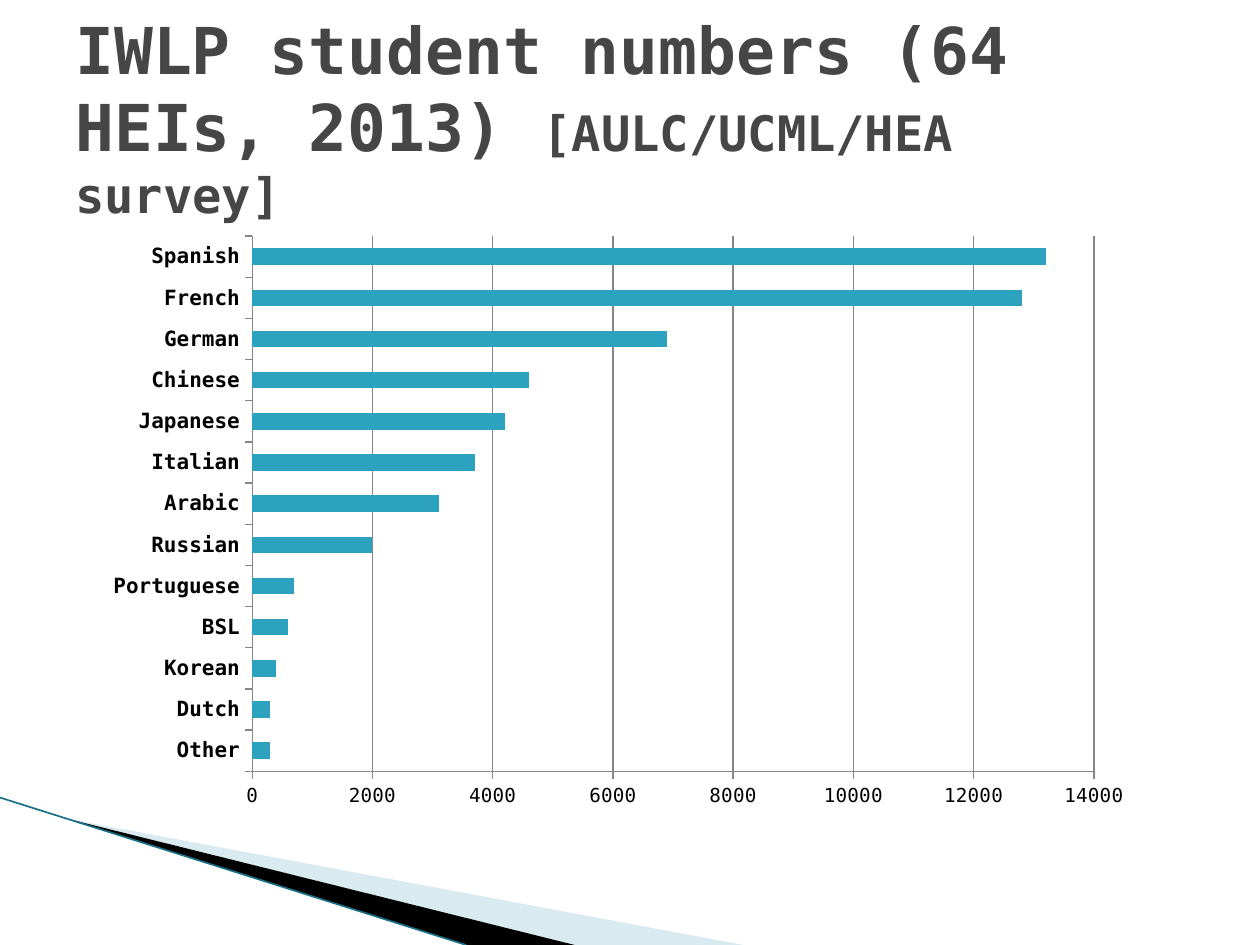
from lxml import etree
from pptx import Presentation
from pptx.chart.data import CategoryChartData
from pptx.dml.color import RGBColor
from pptx.enum.chart import XL_CHART_TYPE as ChartType, XL_TICK_MARK as Tick
from pptx.enum.text import MSO_ANCHOR as Anchor
from pptx.oxml import parse_xml
from pptx.oxml.ns import nsdecls, qn
from pptx.util import Inches, Pt

FONT = "DejaVu Sans Mono"
STUDENTS = {
    "Other": 300, "Dutch": 300, "Korean": 400, "BSL": 600, "Portuguese": 700,
    "Russian": 2000, "Arabic": 3100, "Italian": 3700, "Japanese": 4200,
    "Chinese": 4600, "German": 6900, "French": 12800, "Spanish": 13200,
}


def color(value):
    """Turn a hex string into a colour."""
    return RGBColor.from_string(value)


def set_font(font, size, bold=False, ink="000000"):
    """Give a font the slide's typeface and the stated look."""
    font.name, font.size, font.bold = FONT, Pt(size), bold
    font.color.rgb = color(ink)


def add_wedge(slide, points, fill, alpha=100):
    """Draw a filled outline through points given in inches."""
    corners = [(Inches(x), Inches(y)) for x, y in points]
    builder = slide.shapes.build_freeform(*corners[0])
    builder.add_line_segments(corners[1:])
    wedge = builder.convert_to_shape()
    wedge.shadow.inherit = False
    wedge.line.fill.background()
    wedge.fill.solid()
    wedge.fill.fore_color.rgb = color(fill)
    if alpha < 100:
        tone = wedge.fill._xPr.find(".//" + qn("a:srgbClr"))
        etree.SubElement(tone, qn("a:alpha"), val=str(alpha * 1000))


def add_corner(slide, left, top, width, height):
    """Draw the sweeping wedges and edge line in the bottom corner."""
    bottom = top + height
    tip = (left + 0.54, top + 0.17)
    add_wedge(slide, [tip, (left + width, bottom), (left + 4.56, bottom)],
              "A0CBDC", 40)
    add_wedge(slide, [tip, (left + 4.56, bottom), (left + 3.7, bottom)], "000000")
    edge = slide.shapes.add_connector(
        1, Inches(left), Inches(top), Inches(left + 3.7), Inches(bottom))
    edge.line.color.rgb = color("1A7088")
    edge.line.width = Pt(0.95)
    edge._element.spPr.append(parse_xml(f"<a:effectLst {nsdecls('a')}/>"))


def add_title(slide, left, top, width, height):
    """Write the heading with its smaller source note."""
    title = slide.shapes.add_textbox(
        Inches(left), Inches(top), Inches(width), Inches(height))
    frame = title.text_frame
    frame.word_wrap = True
    frame.vertical_anchor = Anchor.MIDDLE
    heading = frame.paragraphs[0]
    for words, size in (("IWLP student numbers (64 HEIs, 2013) ", 36.9),
                        ("[AULC/UCML/HEA survey]", 27.9)):
        run = heading.add_run()
        run.text = words
        set_font(run.font, size, True, "464646")


def set_plot_area(chart, **fractions):
    """Fix the inner plot area as fractions of the chart."""
    sizes = "".join(f'<c:{key} val="{val}"/>' for key, val in fractions.items())
    layout = parse_xml(
        f"<c:layout {nsdecls('c')}><c:manualLayout>"
        '<c:layoutTarget val="inner"/><c:xMode val="edge"/><c:yMode val="edge"/>'
        f"{sizes}</c:manualLayout></c:layout>")
    plot_area = chart._chartSpace.chart.plotArea
    for old in plot_area.findall(qn("c:layout")):
        plot_area.remove(old)
    plot_area.insert(0, layout)


def add_student_chart(slide, left, top, width, height):
    """Chart the number of students for each language."""
    data = CategoryChartData()
    data.categories = list(STUDENTS)
    data.add_series("Series 1", list(STUDENTS.values()))
    chart = slide.shapes.add_chart(
        ChartType.BAR_CLUSTERED, Inches(left), Inches(top),
        Inches(width), Inches(height), data).chart
    chart.has_legend = chart.has_title = False
    set_font(chart.font, 10)
    set_plot_area(chart, x=0.15, y=0.02, w=0.8, h=0.9)

    bars = chart.plots[0]
    bars.gap_width = 150
    bars.vary_by_categories = False
    bars.series[0].format.fill.solid()
    bars.series[0].format.fill.fore_color.rgb = color("2DA2BF")

    languages, numbers = chart.category_axis, chart.value_axis
    set_font(languages.tick_labels.font, 12, True)
    set_font(numbers.tick_labels.font, 11)
    numbers.minimum_scale, numbers.maximum_scale = 0, 14000
    numbers.major_unit = 2000
    numbers.has_major_gridlines = True
    for part in (languages, numbers, numbers.major_gridlines):
        part.format.line.color.rgb = color("868686")
        part.format.line.width = Pt(0.75)
    for axis in (languages, numbers):
        axis.major_tick_mark = Tick.OUTSIDE
        axis.minor_tick_mark = Tick.NONE


def main():
    """Build and save the slide."""
    deck = Presentation()
    deck.slide_width, deck.slide_height = Inches(10), Inches(7.5)
    slide = deck.slides.add_slide(deck.slide_layouts[6])
    slide.background.fill.solid()
    slide.background.fill.fore_color.rgb = color("FFFFFF")
    add_corner(slide, 0, 6.33, 5.9, 1.17)
    add_title(slide, 0.5, 0.3, 9, 1.25)
    add_student_chart(slide, 0.75, 1.78, 8.35, 4.72)
    deck.save("out.pptx")


if __name__ == "__main__":
    main()
